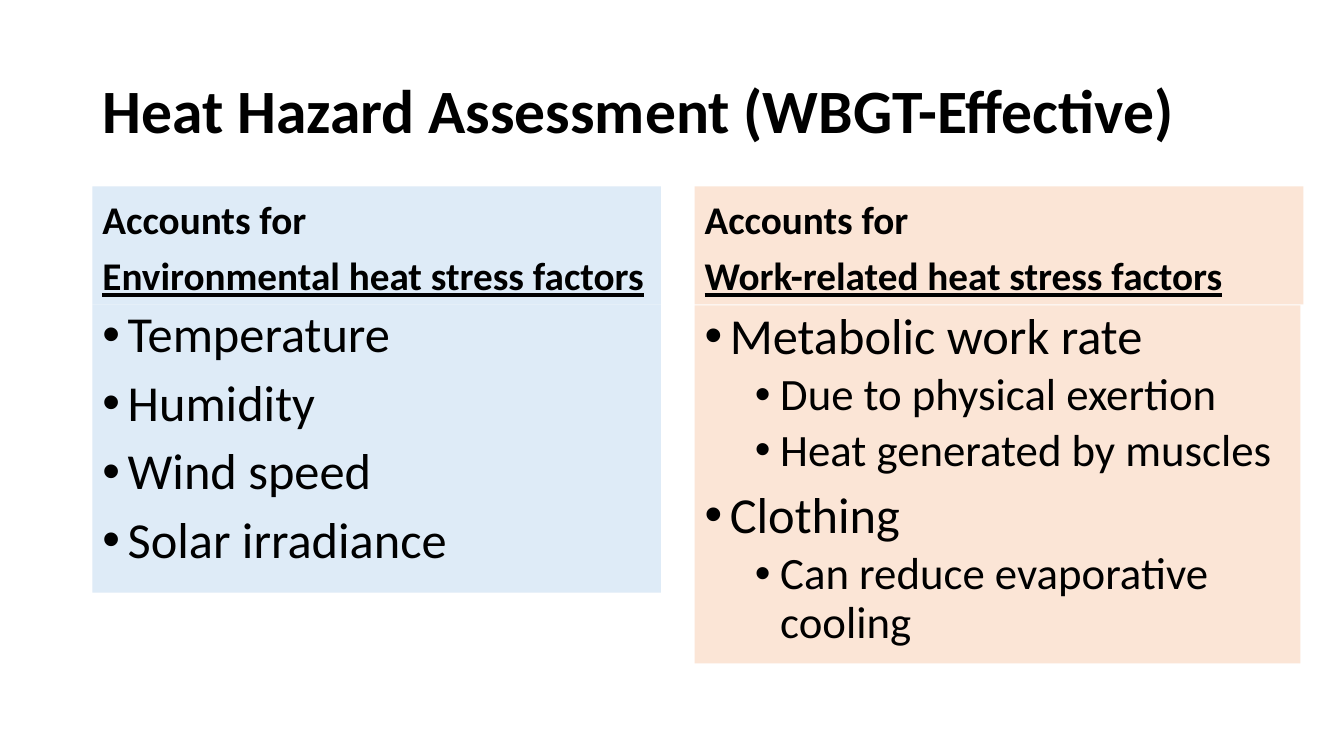
from lxml import etree
from pptx import Presentation
from pptx import util as u
from pptx.dml.color import RGBColor
from pptx.enum import text
from pptx.oxml.ns import qn


def color(value):
    return RGBColor.from_string(value)


def write(para, words, size, bold=False, underline=False, before=0, level=0, bullet=False):
    para.alignment = text.PP_ALIGN.LEFT
    para.line_spacing = 0.9
    para.space_before = u.Pt(before)
    para.level = level
    if bullet:
        props = para._p.get_or_add_pPr()
        props.set("marL", str(u.Pt(18 + 36 * level)))
        props.set("indent", str(u.Pt(-18)))
        etree.SubElement(props, qn("a:buFont")).set("typeface", "Arial")
        etree.SubElement(props, qn("a:buChar")).set("char", "•")
    span = para.add_run()
    span.text = words
    span.font.name = "Calibri"
    span.font.size = u.Pt(size)
    span.font.bold = bold
    span.font.underline = underline
    span.font.color.rgb = color("000000")


# Deck and comparison page
deck = Presentation()
deck.slide_width, deck.slide_height = u.Pt(960), u.Pt(540)
page = deck.slides.add_slide(deck.slide_layouts[4])
holders = {holder.placeholder_format.idx: holder for holder in page.placeholders}

# Positions, anchors and fills: index, left, top, width, height, anchor, fill
TOP, MIDDLE, BOTTOM = text.MSO_ANCHOR.TOP, text.MSO_ANCHOR.MIDDLE, text.MSO_ANCHOR.BOTTOM
BLUE, ORANGE = "DEEBF7", "FBE5D6"
boxes = [
    (0, 66, 28.75, 828, 104.4, MIDDLE, None),
    (1, 66, 133.2, 406.1, 84.2, BOTTOM, BLUE),
    (2, 66, 217.4, 406.1, 205.9, TOP, BLUE),
    (3, 496.1, 133.2, 434.9, 84.2, BOTTOM, ORANGE),
    (4, 496.1, 218.2, 432.7, 255.6, TOP, ORANGE),
]
for index, left, top, width, height, anchor, fill in boxes:
    box = holders[index]
    box.left, box.top = u.Pt(left), u.Pt(top)
    box.width, box.height = u.Pt(width), u.Pt(height)
    box.text_frame.vertical_anchor = anchor
    box.text_frame.word_wrap = True
    box.text_frame.auto_size = text.MSO_AUTO_SIZE.NONE
    if fill:
        box.fill.solid()
        box.fill.fore_color.rgb = color(fill)

# Title
write(holders[0].text_frame.paragraphs[0], "Heat Hazard Assessment (WBGT-Effective)", 44, bold=True)

# Column headings
for index, factors in [(1, "Environmental"), (3, "Work-related")]:
    frame = holders[index].text_frame
    write(frame.paragraphs[0], "Accounts for", 28, bold=True, before=10)
    write(frame.add_paragraph(), f"{factors} heat stress factors", 28,
          bold=True, underline=True, before=10)

# Bulleted lists: level and words
lists = {
    2: [(0, "Temperature"), (0, "Humidity"), (0, "Wind speed"), (0, "Solar irradiance")],
    4: [
        (0, "Metabolic work rate"),
        (1, "Due to physical exertion"),
        (1, "Heat generated by muscles"),
        (0, "Clothing"),
        (1, "Can reduce evaporative cooling"),
    ],
}
for index, items in lists.items():
    frame = holders[index].text_frame
    for number, (level, words) in enumerate(items):
        para = frame.add_paragraph() if number else frame.paragraphs[0]
        write(para, words, 32 if level else 36, before=5 if level else 10,
              level=level, bullet=True)

deck.save("out.pptx")
